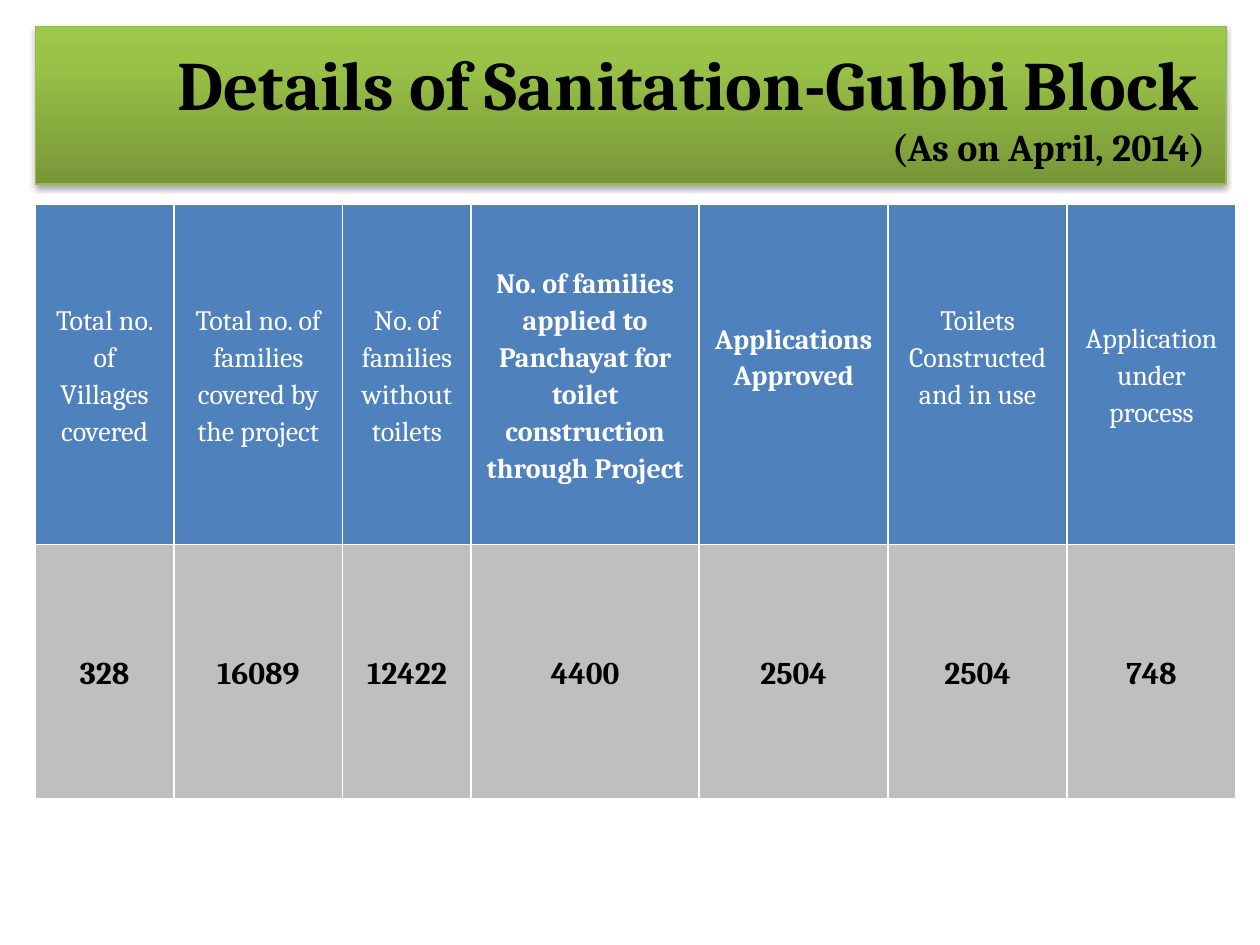
from lxml.etree import SubElement
from pptx import Presentation
from pptx.dml.color import RGBColor
from pptx.enum.shapes import MSO_SHAPE as Shape
from pptx.enum.text import MSO_ANCHOR as Anchor, PP_ALIGN as Align
from pptx.oxml import parse_xml
from pptx.oxml.ns import nsdecls, qn
from pptx.util import Inches, Pt

FONT = "Cambria"
LEFT = 0.28
COLS = [1.1, 1.34, 1.02, 1.81, 1.5, 1.42, 1.34]
ROWS = [2.7, 2.02]
LIFT = 0.29  # one text line, raises the text of a cell

# heading lines, bold, bottom margin, value
DATA = [
    (["Total no. of", "Villages", "covered"], False, 0, "328"),
    (["Total no. of families covered by the project"], False, 0, "16089"),
    (["No. of families", "without", "toilets"], False, 0, "12422"),
    (["No. of families applied to", "Panchayat for",
      "toilet construction through Project"], True, 0, "4400"),
    (["Applications", "Approved"], True, LIFT, "2504"),
    (["Toilets Constructed and in use"], False, LIFT, "2504"),
    (["Application under process"], False, 0, "748"),
]


def color(code):
    return RGBColor.from_string(code)


def style(para, align, code, bold, size=None):
    para.alignment = align
    font = para.font
    font.name, font.bold = FONT, bold
    font.color.rgb = color(code)
    if size:
        font.size = Pt(size)


def shade(shape, stops, angle):
    """Fill with a gradient of several stops and add a soft shadow below."""
    marks = "".join(f'<a:gs pos="{pos * 1000}"><a:srgbClr val="{code}"/></a:gs>'
                    for pos, code in stops)
    grad = parse_xml(f'<a:gradFill {nsdecls("a")} rotWithShape="1">'
                     f'<a:gsLst>{marks}</a:gsLst>'
                     f'<a:lin ang="{angle * 60000}" scaled="0"/></a:gradFill>')
    props = shape.element.spPr
    props.find(qn("a:prstGeom")).addnext(grad)
    shape.shadow.inherit = False
    cast = SubElement(props.find(qn("a:effectLst")), qn("a:outerShdw"),
                      blurRad=str(Pt(3.1)), dist=str(Pt(1.8)),
                      dir="5400000", rotWithShape="0")
    tone = SubElement(cast, qn("a:srgbClr"), val="000000")
    SubElement(tone, qn("a:alpha"), val="35000")


def add_title(slide):
    box = slide.shapes.add_shape(Shape.RECTANGLE, Inches(LEFT), Inches(0.21),
                                 Inches(9.45), Inches(1.25))
    shade(box, [(0, "779737"), (80, "9BC348"), (100, "9DC746")], 270)
    box.line.color.rgb = color("98B955")
    box.line.width = Pt(0.75)
    frame = box.text_frame
    frame.word_wrap = True
    frame.vertical_anchor = Anchor.MIDDLE
    para = frame.paragraphs[0]
    style(para, Align.RIGHT, "000000", True)
    head = para.add_run()
    head.text, head.font.size = "Details of Sanitation-Gubbi Block ", Pt(39.6)
    para.add_line_break()
    date = para.add_run()
    date.text, date.font.size = "(As on April, 2014) ", Pt(21.6)


def edge(cell):
    """Draw thin white borders on all four sides."""
    props = cell._tc.get_or_add_tcPr()
    for spot, side in enumerate(("lnL", "lnR", "lnT", "lnB")):
        props.insert(spot, parse_xml(
            f'<a:{side} {nsdecls("a")} w="{Pt(1)}"><a:solidFill>'
            f'<a:srgbClr val="FFFFFF"/></a:solidFill></a:{side}>'))


def fill_cell(cell, lines, back, ink, size, bold, base=0):
    cell.fill.solid()
    cell.fill.fore_color.rgb = color(back)
    edge(cell)
    cell.vertical_anchor = Anchor.MIDDLE
    cell.margin_left = cell.margin_right = Inches(0.07)
    cell.margin_top, cell.margin_bottom = 0, Inches(base)
    cell.text_frame.text = "\n".join(lines)
    for para in cell.text_frame.paragraphs:
        style(para, Align.CENTER, ink, bold, size)
        para.line_spacing = 1.15


def add_grid(slide):
    table = slide.shapes.add_table(
        len(ROWS), len(COLS), Inches(LEFT), Inches(1.62),
        Inches(sum(COLS)), Inches(sum(ROWS))).table
    for row, high in zip(table.rows, ROWS):
        row.height = Inches(high)
    for col, wide in zip(table.columns, COLS):
        col.width = Inches(wide)
    for i, (lines, bold, base, value) in enumerate(DATA):
        fill_cell(table.cell(0, i), lines, "4F81BD", "FFFFFF", 16, bold, base)
        fill_cell(table.cell(1, i), [value], "BFBFBF", "000000", 18, True)


def main():
    deck = Presentation()
    deck.slide_width, deck.slide_height = Inches(10), Inches(7.5)
    slide = deck.slides.add_slide(deck.slide_layouts[6])
    add_title(slide)
    add_grid(slide)
    deck.save("out.pptx")


if __name__ == "__main__":
    main()
